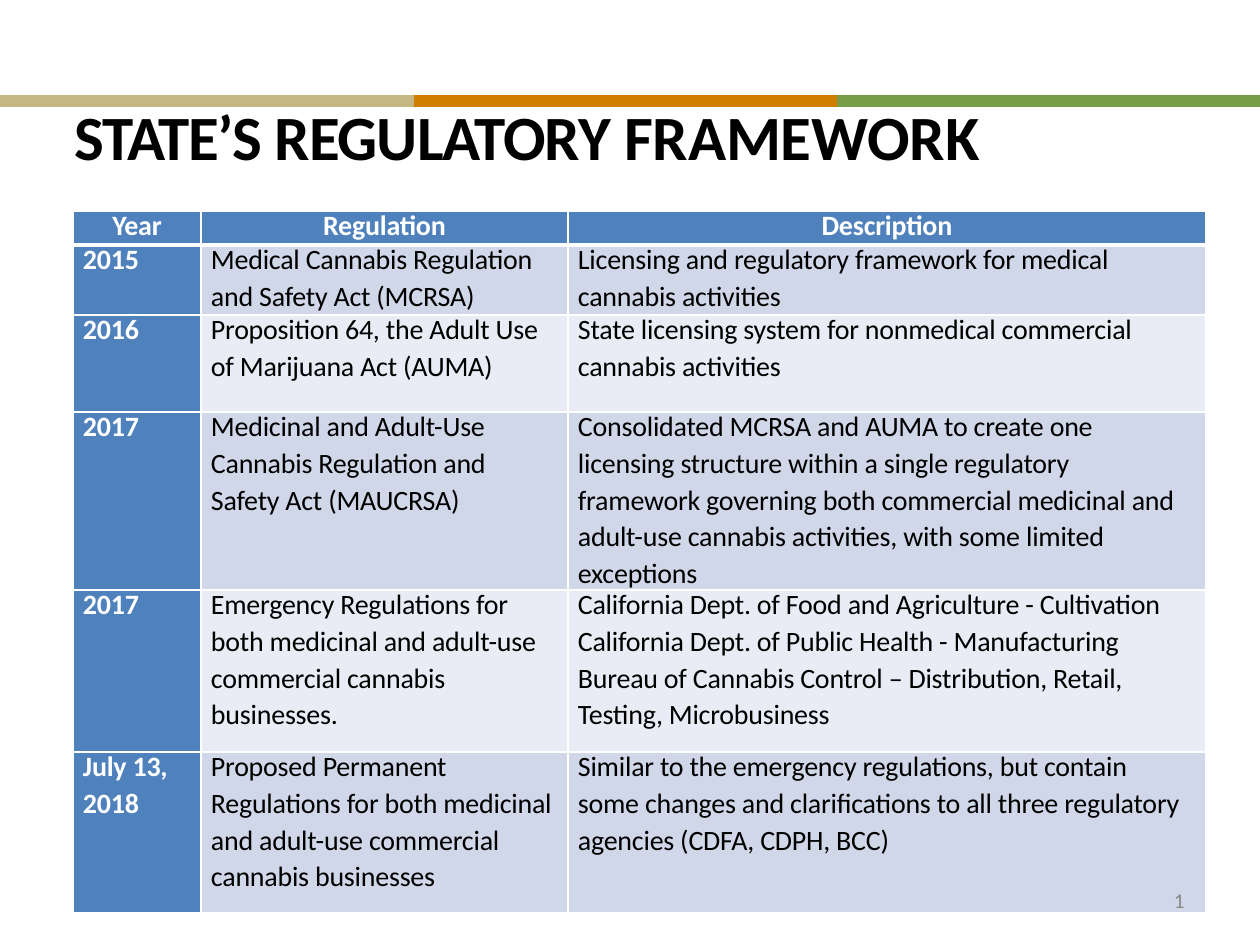
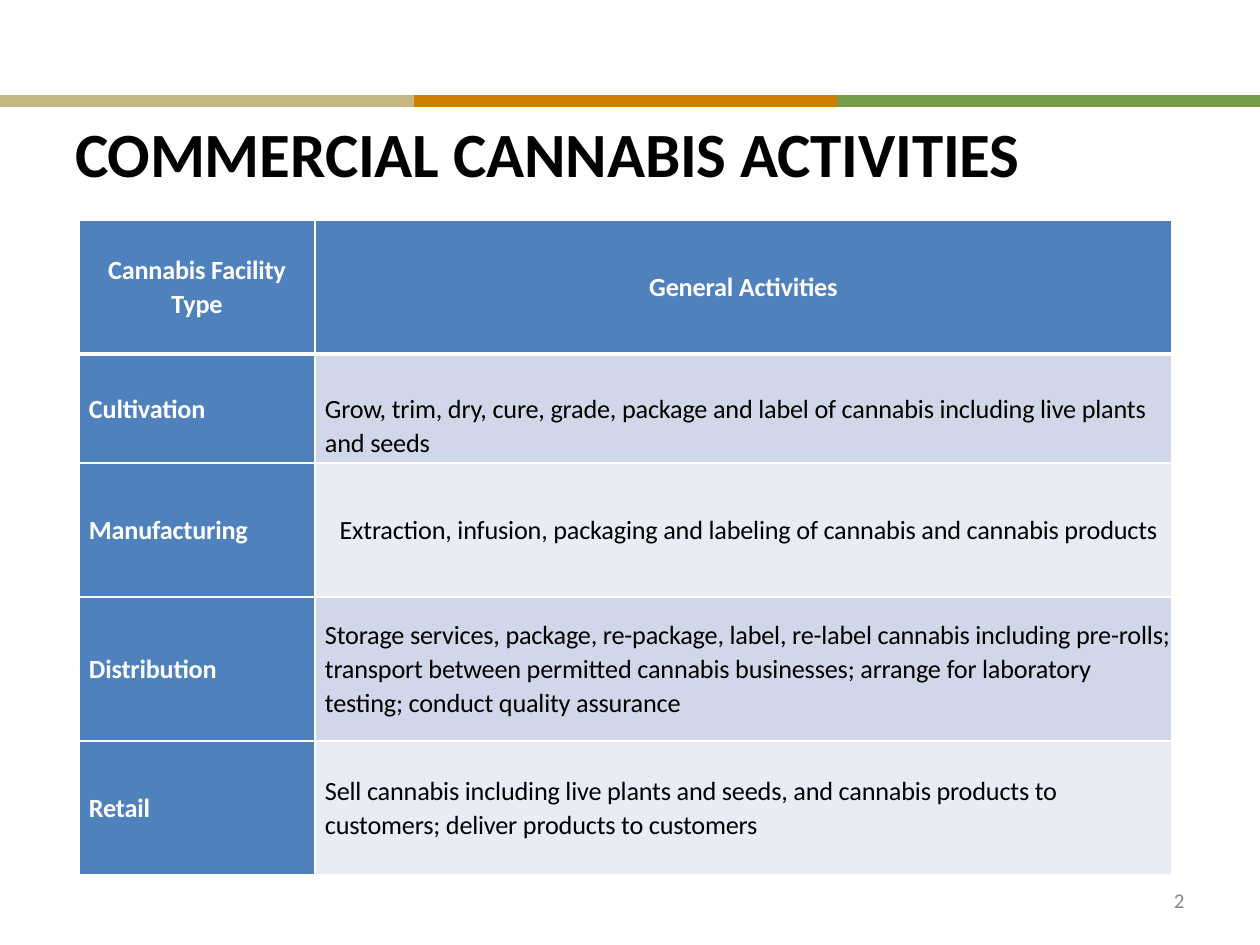
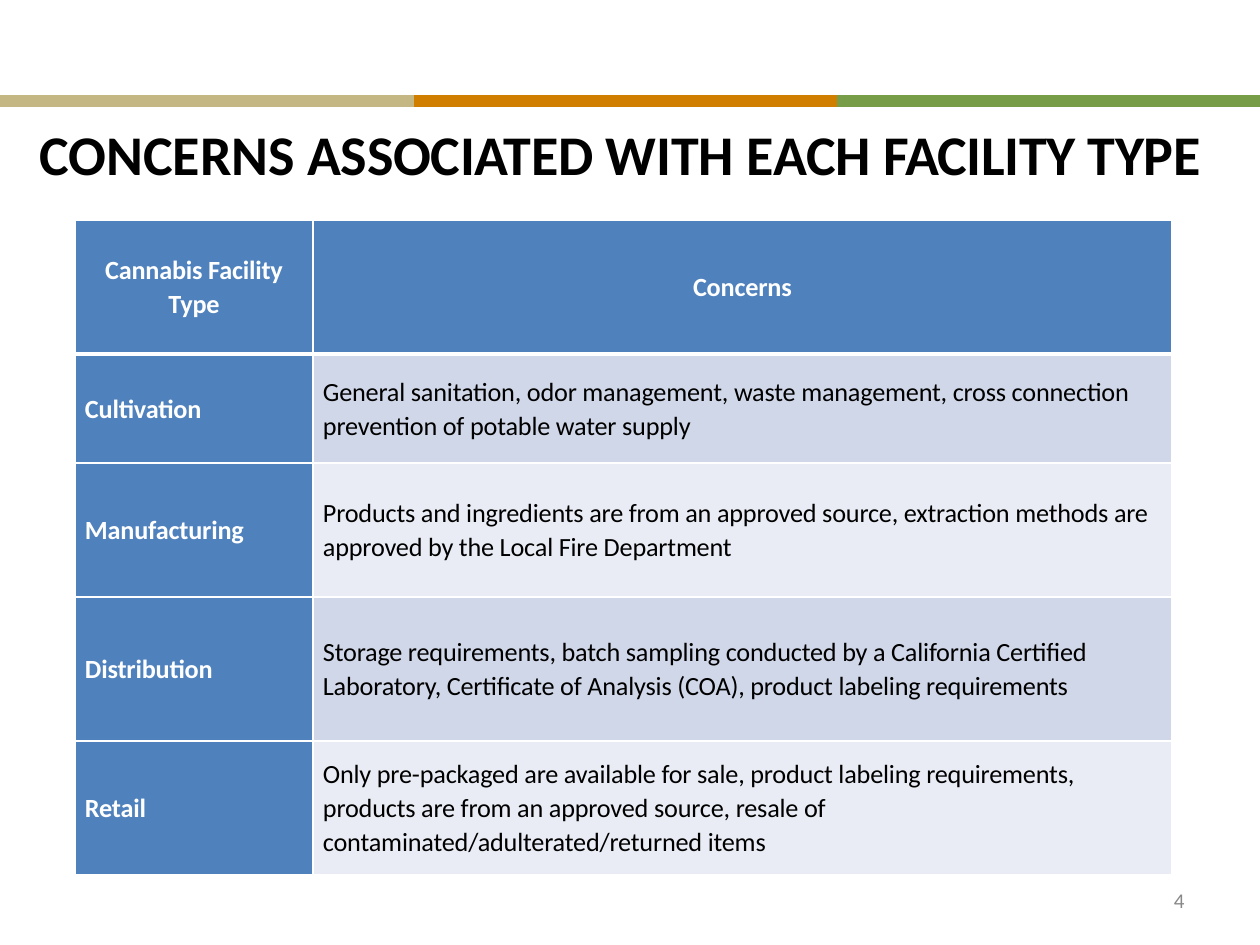
from dataclasses import dataclass

from lxml import etree
from pptx import Presentation
from pptx.dml.color import RGBColor
from pptx.enum.shapes import MSO_CONNECTOR
from pptx.enum.text import MSO_ANCHOR, PP_ALIGN
from pptx.oxml.ns import qn
from pptx.util import Emu, Pt

STRAIGHT = MSO_CONNECTOR.STRAIGHT
TOP, MIDDLE = MSO_ANCHOR.TOP, MSO_ANCHOR.MIDDLE
LEFT, CENTER = PP_ALIGN.LEFT, PP_ALIGN.CENTER
EMU_PER_PX = 914400 / 126
BLANK_LAYOUT = 6


@dataclass(frozen=True)
class Theme:
    font: str = "Calibri"
    ink: str = "000000"
    white: str = "FFFFFF"
    number: str = "888888"
    header: str = "4F81BC"
    rows: tuple = ("D0D7E8", "E9ECF4")
    band: tuple = ("C5B783", "CF7E00", "789D49")
    band_weight: float = 6.6
    title_size: int = 36
    long_title_size: int = 32
    number_size: int = 12
    tight: float = -0.1
    rule: int = 1
    header_rule: int = 3


@dataclass(frozen=True)
class GridStyle:
    size: int
    anchor: int
    spacing: float
    lead_spacing: float = 0


THEME = Theme()
REGULATION_STYLE = GridStyle(16, TOP, 1.07, 18.6)
FACILITY_STYLE = GridStyle(15, MIDDLE, 1.06)
FACILITY_ROWS = (134, 109, 134, 144, 134)
FACILITY_TOP = 220
BAND_STOPS = (0, 414, 837, 1260)
BAND_Y = 101

REGULATIONS = (
    ("Year", "Regulation", "Description"),
    ("2015",
     "Medical Cannabis Regulation\nand Safety Act (MCRSA)",
     "Licensing and regulatory framework for medical\ncannabis activities"),
    ("2016",
     "Proposition 64, the Adult Use\nof Marijuana Act (AUMA)",
     "State licensing system for nonmedical commercial\ncannabis activities"),
    ("2017",
     "Medicinal and Adult-Use\nCannabis Regulation and\nSafety Act (MAUCRSA)",
     "Consolidated MCRSA and AUMA to create one\n"
     "licensing structure within a single regulatory\n"
     "framework governing both commercial medicinal and\n"
     "adult-use cannabis activities, with some limited\nexceptions"),
    ("2017",
     "Emergency Regulations for\nboth medicinal and adult-use\n"
     "commercial cannabis\nbusinesses.",
     "California Dept. of Food and Agriculture - Cultivation\n"
     "California Dept. of Public Health - Manufacturing\n"
     "Bureau of Cannabis Control – Distribution, Retail,\n"
     "Testing, Microbusiness"),
    ("July 13,\n2018",
     "Proposed Permanent\nRegulations for both medicinal\n"
     "and adult-use commercial\ncannabis businesses",
     "Similar to the emergency regulations, but contain\n"
     "some changes and clarifications to all three regulatory\n"
     "agencies (CDFA, CDPH, BCC)"),
)
FACILITIES = ("Cannabis Facility\nType", "Cultivation", "Manufacturing",
              "Distribution", "Retail")
ACTIVITIES = (
    "General Activities",
    "Grow, trim, dry, cure, grade, package and label of cannabis including "
    "live plants\nand seeds",
    "Extraction, infusion, packaging and labeling of cannabis and cannabis products",
    "Storage services, package, re-package, label, re-label cannabis including "
    "pre-rolls; transport between permitted cannabis businesses; arrange for "
    "laboratory\ntesting; conduct quality assurance",
    "Sell cannabis including live plants and seeds, and cannabis products to\n"
    "customers; deliver products to customers",
)
CONCERNS = (
    "Concerns",
    "General sanitation, odor management, waste management, cross connection\n"
    "prevention of potable water supply",
    "Products and ingredients are from an approved source, extraction methods are\n"
    "approved by the Local Fire Department",
    "Storage requirements, batch sampling conducted by a California Certified\n"
    "Laboratory, Certificate of Analysis (COA), product labeling requirements",
    "Only pre-packaged are available for sale, product labeling requirements,\n"
    "products are from an approved source, resale of\n"
    "contaminated/adulterated/returned items",
)


def px(length):
    return Emu(round(length * EMU_PER_PX))


def color(value):
    return RGBColor.from_string(value)


def set_tracking(font, points):
    font._rPr.set("spc", str(round(points * 100)))


def set_font(paragraph, size, ink, bold=False):
    paragraph.font.name = THEME.font
    paragraph.font.size = Pt(size)
    paragraph.font.bold = bold
    paragraph.font.color.rgb = color(ink)


def set_margins(holder, left=0, top=0):
    holder.margin_left, holder.margin_top = px(left), px(top)
    holder.margin_right = holder.margin_bottom = 0


def add_band(page):
    for start, end, ink in zip(BAND_STOPS, BAND_STOPS[1:], THEME.band):
        line = page.shapes.add_connector(
            STRAIGHT, px(start), px(BAND_Y), px(end), px(BAND_Y))
        line.line.color.rgb = color(ink)
        line.line.width = Pt(THEME.band_weight)
        etree.SubElement(line._element.spPr, qn("a:effectLst"))


def add_text(page, left, top, width, height, size, ink, spans, bold=False):
    box = page.shapes.add_textbox(px(left), px(top), px(width), px(height))
    frame = box.text_frame
    frame.word_wrap = False
    set_margins(frame)
    paragraph = frame.paragraphs[0]
    set_font(paragraph, size, ink, bold)
    for text, tracking in spans:
        span = paragraph.add_run()
        span.text = text
        set_tracking(span.font, tracking)


def add_title(page, left, top, width, size, spans):
    add_text(page, left, top, width, 78, size, THEME.ink, spans, bold=True)


def add_number(page, number):
    add_text(page, 1174, 888, 18, 26, THEME.number_size, THEME.number,
             [(number, 0)])


def set_borders(cell, row):
    weights = {
        "lnL": THEME.rule,
        "lnR": THEME.rule,
        "lnT": THEME.header_rule if row == 1 else THEME.rule,
        "lnB": THEME.header_rule if row == 0 else THEME.rule,
    }
    properties = cell._tc.get_or_add_tcPr()
    for position, (side, weight) in enumerate(weights.items()):
        border = etree.Element(qn(f"a:{side}"), w=str(Pt(weight)))
        fill = etree.SubElement(border, qn("a:solidFill"))
        etree.SubElement(fill, qn("a:srgbClr"), val=THEME.white)
        properties.insert(position, border)


def write_cell(cell, text, style, ink, bold, align):
    head, _, tail = text.partition("\n")
    parts = [head, tail] if style.lead_spacing and tail else [text]
    for index, part in enumerate(parts):
        frame = cell.text_frame
        paragraph = frame.add_paragraph() if index else frame.paragraphs[0]
        paragraph.text = part
        paragraph.alignment = align
        is_lead = style.lead_spacing and index == 0
        paragraph.line_spacing = Pt(style.lead_spacing) if is_lead else style.spacing
        set_font(paragraph, style.size, ink, bold)
        set_tracking(paragraph.font, THEME.tight)


def add_grid(page, left, top, widths, heights, rows, style):
    grid = page.shapes.add_table(
        len(rows), len(widths), px(left), px(top),
        px(sum(widths)), px(sum(heights))).table
    for column, width in zip(grid.columns, widths):
        column.width = px(width)
    for row, height in zip(grid.rows, heights):
        row.height = px(height)
    for row, texts in enumerate(rows):
        for column, text in enumerate(texts):
            cell = grid.cell(row, column)
            is_header = row == 0
            is_label = is_header or column == 0
            cell.fill.solid()
            cell.fill.fore_color.rgb = color(
                THEME.header if is_label else THEME.rows[(row - 1) % 2])
            cell.vertical_anchor = style.anchor
            set_margins(cell, left=0 if is_header else 10)
            set_borders(cell, row)
            write_cell(cell, text, style, THEME.white if is_label else THEME.ink,
                       is_label, CENTER if is_header else LEFT)
    return grid


def add_page(deck):
    page = deck.slides.add_slide(deck.slide_layouts[BLANK_LAYOUT])
    add_band(page)
    return page


def build_framework(deck):
    page = add_page(deck)
    add_title(page, 75, 98, 931, THEME.title_size,
              [("STATE’S ", -0.9), ("REGULATORY ", -0.6), ("FRAMEWORK", -0.1)])
    add_grid(page, 73, 211, (128, 367, 638), (34, 70, 97, 178, 162, 161),
             REGULATIONS, REGULATION_STYLE)
    add_number(page, "1")


def build_activities(deck):
    page = add_page(deck)
    add_title(page, 75, 115, 954, THEME.title_size,
              [("COMMERCIAL CANNABIS ACTIVITIES", -0.1)])
    grid = add_grid(page, 79, FACILITY_TOP, (236, 857), FACILITY_ROWS,
                    list(zip(FACILITIES, ACTIVITIES)), FACILITY_STYLE)
    grid.cell(1, 1).margin_top = px(34)
    grid.cell(2, 1).text_frame.paragraphs[0].alignment = CENTER
    add_number(page, "2")


def build_concerns(deck):
    page = add_page(deck)
    add_title(page, 40, 120, 1175, THEME.long_title_size,
              [("CONCERNS ", -0.1), ("ASSOCIATED ", -0.2), ("WITH ", -0.1),
               ("EACH ", -0.2), ("FACILITY ", -0.3), ("TYPE", -0.1)])
    add_grid(page, 75, FACILITY_TOP, (238, 859), FACILITY_ROWS,
             list(zip(FACILITIES, CONCERNS)), FACILITY_STYLE)
    add_number(page, "4")


def main():
    deck = Presentation()
    deck.slide_width, deck.slide_height = px(1260), px(945)
    build_framework(deck)
    build_activities(deck)
    build_concerns(deck)
    deck.save("out.pptx")


if __name__ == "__main__":
    main()
